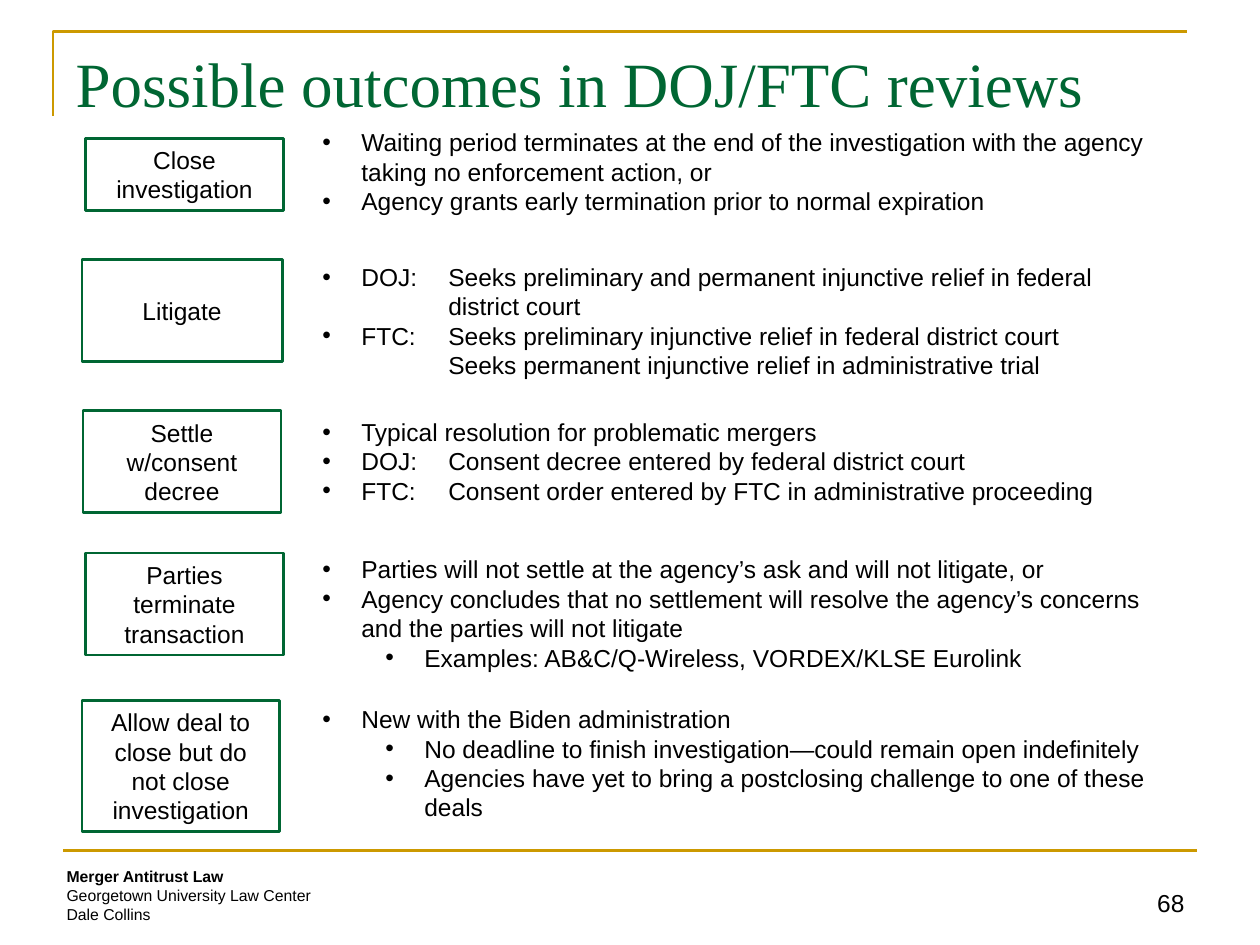
from lxml import etree
from pptx import Presentation
from pptx.dml.color import RGBColor
from pptx.enum.shapes import MSO_CONNECTOR, MSO_SHAPE
from pptx.enum.text import MSO_ANCHOR, MSO_AUTO_SIZE, PP_ALIGN
from pptx.oxml.ns import qn
from pptx.util import Inches, Pt

LINE, RECTANGLE = MSO_CONNECTOR.STRAIGHT, MSO_SHAPE.RECTANGLE
TOP, MIDDLE, BOTTOM = MSO_ANCHOR.TOP, MSO_ANCHOR.MIDDLE, MSO_ANCHOR.BOTTOM
LEFT, CENTER, RIGHT = PP_ALIGN.LEFT, PP_ALIGN.CENTER, PP_ALIGN.RIGHT
GROW, FIXED = MSO_AUTO_SIZE.SHAPE_TO_FIT_TEXT, MSO_AUTO_SIZE.NONE

GREEN, GOLD, BLACK = "006633", "CC9900", "000000"
BODY = {"name": "Arial", "size": Pt(14)}
SMALL = {"name": "Arial", "size": Pt(9)}
HEADING = {"name": "Times New Roman", "size": Pt(36)}
NOTES_LEFT, NOTES_WIDTH = 2.46, 7.04
HANG, SUB_STEP, TAB_STOP = 0.31, 0.5, 1.0

# Label, its place, top and height of the notes, then (level, text) per bullet
OUTCOMES = [
    ("Close investigation", (0.68, 1.1, 1.57, 0.57), 0.96, 0.81, [
        (0, "Waiting period terminates at the end of the investigation with "
            "the agency taking no enforcement action, or"),
        (0, "Agency grants early termination prior to normal expiration")]),
    ("Litigate", (0.65, 2.06, 1.59, 0.81), 2.03, 1.04, [
        (0, "DOJ: \tSeeks preliminary and permanent injunctive relief in "
            "federal \n\tdistrict court"),
        (0, "FTC: \tSeeks preliminary injunctive relief in federal district "
            "court\n\tSeeks permanent injunctive relief in administrative trial")]),
    ("Settle w/consent decree", (0.66, 3.26, 1.57, 0.81), 3.26, 0.81, [
        (0, "Typical resolution for problematic mergers"),
        (0, "DOJ: \tConsent decree entered by federal district court"),
        (0, "FTC:\tConsent order entered by FTC in administrative proceeding")]),
    ("Parties terminate transaction", (0.68, 4.39, 1.57, 0.81), 4.35, 1.04, [
        (0, "Parties will not settle at the agency’s ask and will not "
            "litigate, or"),
        (0, "Agency concludes that no settlement will resolve the agency’s "
            "concerns and the parties will not litigate"),
        (1, "Examples: AB&C/Q-Wireless, VORDEX/KLSE Eurolink")]),
    ("Allow deal to close but do not close investigation",
     (0.65, 5.56, 1.57, 1.04), 5.54, 1.04, [
        (0, "New with the Biden administration"),
        (1, "No deadline to finish investigation—could remain open "
            "indefinitely"),
        (1, "Agencies have yet to bring a postclosing challenge to one of "
            "these deals")]),
]


def color(value):
    return RGBColor.from_string(value)


def inches(place):
    return [Inches(value) for value in place]


def set_attributes(target, values):
    for name, value in values.items():
        setattr(target, name, value)


def write(para, text, font, ink=BLACK, align=LEFT):
    """Fill a paragraph; line breaks get the text size, so lines keep their height."""
    para.text = text
    para.alignment = align
    for span in para.runs:
        set_attributes(span.font, font)
        span.font.color.rgb = color(ink)
    for line_break in para._p.findall(qn("a:br")):
        size = str(int(font["size"].pt * 100))
        etree.SubElement(line_break, qn("a:rPr"), sz=size)


def add_bullet(para, level):
    properties = para._p.get_or_add_pPr()
    properties.set("marL", str(Inches(HANG + SUB_STEP * level)))
    properties.set("indent", str(Inches(-HANG)))
    etree.SubElement(properties, qn("a:buFont"), typeface="Arial")
    etree.SubElement(properties, qn("a:buChar"), char="•")
    tabs = etree.SubElement(properties, qn("a:tabLst"))
    etree.SubElement(tabs, qn("a:tab"), pos=str(Inches(TAB_STOP)), algn="l")


def add_text_box(page, place, anchor=TOP, auto_size=GROW):
    box = page.shapes.add_textbox(*inches(place))
    set_attributes(box.text_frame, {
        "word_wrap": True, "auto_size": auto_size, "vertical_anchor": anchor})
    return box.text_frame


def add_notes(page, top, height, bullets):
    frame = add_text_box(page, (NOTES_LEFT, top, NOTES_WIDTH, height))
    for index, (level, text) in enumerate(bullets):
        para = frame.add_paragraph() if index else frame.paragraphs[0]
        write(para, text, BODY)
        add_bullet(para, level)


def add_label(page, text, place):
    label = page.shapes.add_shape(RECTANGLE, *inches(place))
    label.shadow.inherit = False
    label.fill.background()
    label.line.color.rgb = color(GREEN)
    label.line.width = Pt(1.5)
    set_attributes(label.text_frame, {
        "word_wrap": True, "auto_size": FIXED, "vertical_anchor": MIDDLE})
    write(label.text_frame.paragraphs[0], text, BODY, align=CENTER)


def add_frame_lines(page):
    """Draw the corner above the title and the rule above the footer."""
    builder = page.shapes.build_freeform(Inches(0.42), Inches(0.92))
    builder.add_line_segments(
        [inches((0.42, 0.25)), inches((9.42, 0.25))], close=False)
    corner = builder.convert_to_shape()
    corner.shadow.inherit = False
    corner.fill.background()
    rule = page.shapes.add_connector(LINE, *inches((0.5, 6.75, 9.5, 6.75)))
    etree.SubElement(rule._element.spPr, qn("a:effectLst"))
    for stroke in (corner.line, rule.line):
        stroke.color.rgb = color(GOLD)
        stroke.width = Pt(1.5)


def add_title(page, text):
    title = page.shapes.title
    places = inches((0.5, 0.3, 9, 1.25))
    set_attributes(title, dict(zip(("left", "top", "width", "height"), places)))
    set_attributes(title.text_frame, {
        "word_wrap": True, "auto_size": FIXED, "vertical_anchor": TOP})
    write(title.text_frame.paragraphs[0], text, HEADING, GREEN)


def add_footer(page):
    para = add_text_box(page, (0.43, 6.83, 4.67, 0.56)).paragraphs[0]
    write(para, "Merger Antitrust Law\nGeorgetown University Law Center\n"
                "Dale Collins", SMALL)
    para.runs[0].font.bold = True
    number = add_text_box(page, (7.17, 6.83, 2.33, 0.5), BOTTOM, FIXED)
    write(number.paragraphs[0], "68", BODY, align=RIGHT)


def main():
    deck = Presentation()
    deck.slide_width, deck.slide_height = inches((10, 7.5))
    page = deck.slides.add_slide(deck.slide_layouts.get_by_name("Title Only"))
    add_frame_lines(page)
    add_title(page, "Possible outcomes in DOJ/FTC reviews")
    for label, place, top, height, bullets in OUTCOMES:
        add_label(page, label, place)
        add_notes(page, top, height, bullets)
    add_footer(page)
    deck.save("out.pptx")


if __name__ == "__main__":
    main()
